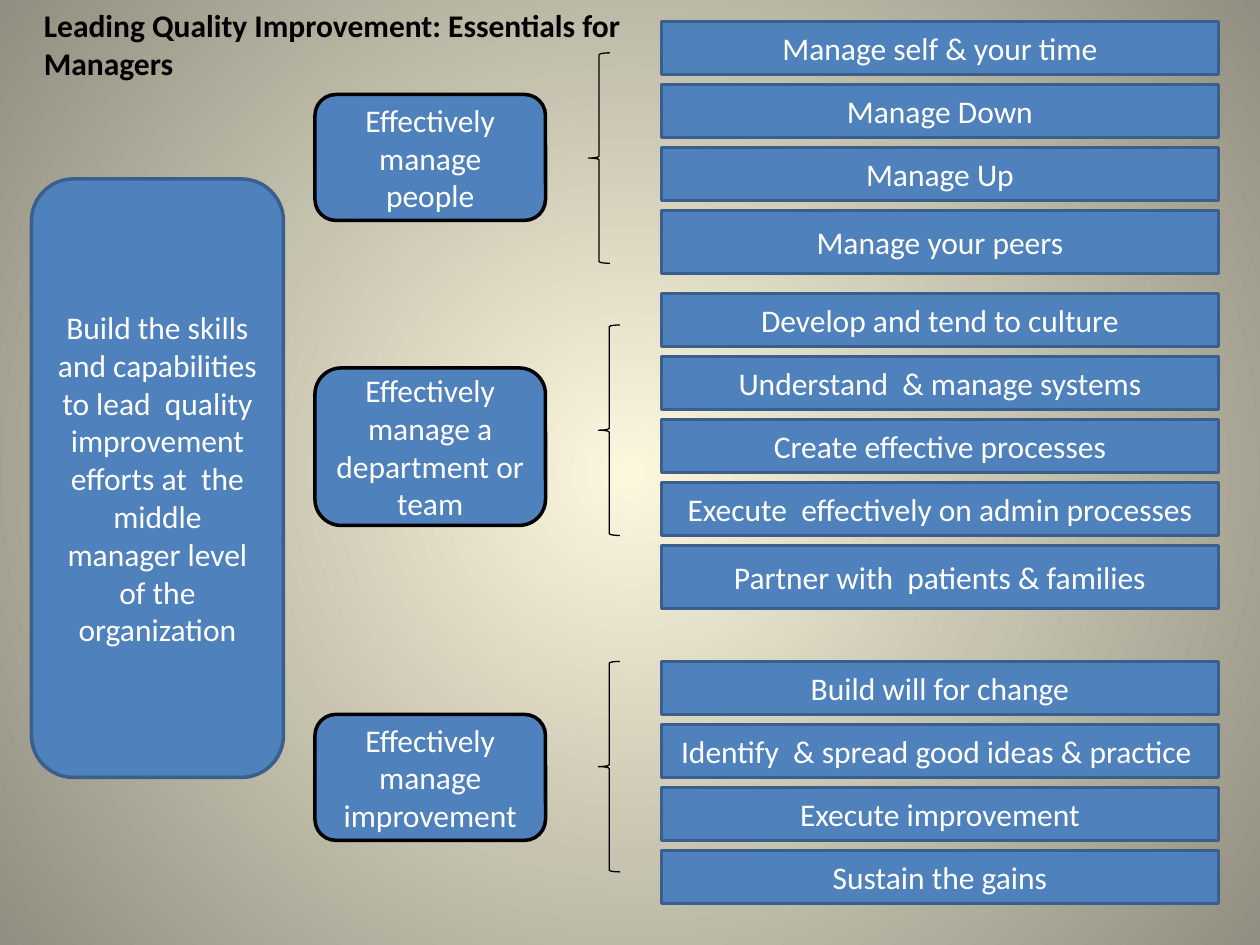
from lxml.etree import SubElement
from pptx import Presentation
from pptx.dml.color import RGBColor
from pptx.enum.shapes import MSO_SHAPE
from pptx.enum.text import MSO_ANCHOR, PP_ALIGN
from pptx.oxml.ns import qn
from pptx.util import Inches, Pt

BLUE = RGBColor(0x4F, 0x81, 0xBD)
NAVY = RGBColor(0x3A, 0x5F, 0x8C)
WHITE = RGBColor(0xFF, 0xFF, 0xFF)
BLACK = RGBColor(0, 0, 0)
CREAM = RGBColor(0xFC, 0xF7, 0xDD)
GRAY = RGBColor(0x91, 0x8E, 0x81)

TITLE = "Leading Quality Improvement: Essentials for Managers"
GOAL = ("Build the skills and capabilities to lead  quality improvement "
        "efforts at  the middle manager level of the organization")
STEP = 0.5

# driver text, top, height; brace left, top; first task top, tasks, last height
GROUPS = [
    ("Effectively manage people", 0.75, 1, 4.67, 0.42, 0.17,
     ["Manage self & your time", "Manage Down", "Manage Up",
      "Manage your peers"], 0.5),
    ("Effectively manage a department or team", 2.92, 1.25, 4.75, 2.58, 2.33,
     ["Develop and tend to culture", "Understand  & manage systems",
      "Create effective processes", "Execute  effectively on admin processes",
      "Partner with  patients & families"], 0.5),
    ("Effectively manage improvement", 5.67, 1, 4.75, 5.25, 5.25,
     ["Build will for change", "Identify  & spread good ideas & practice ",
      "Execute improvement", "Sustain the gains"], 0.42),
]


def paint_back(slide):
    fill = slide.background.fill
    fill.gradient()
    for stop, color in zip(fill.gradient_stops, (CREAM, GRAY)):
        stop.color.rgb = color
    grad = next(slide.element.iter(qn("a:gradFill")))
    grad.remove(grad.find(qn("a:lin")))
    path = SubElement(grad, qn("a:path"), path="circle")
    SubElement(path, qn("a:fillToRect"),
               l="50000", t="50000", r="50000", b="50000")


def set_text(frame, text, color, bold=False):
    frame.word_wrap = True
    frame.text = text
    font = frame.paragraphs[0].runs[0].font
    font.name = "Calibri"
    font.size = Pt(18)
    font.bold = bold
    font.color.rgb = color


def add_form(slide, kind, box, line, width):
    shape = slide.shapes.add_shape(kind, *map(Inches, box))
    shape.shadow.inherit = False
    shape.line.color.rgb = line
    shape.line.width = Pt(width)
    return shape


def add_box(slide, kind, box, text, line=NAVY):
    shape = add_form(slide, kind, box, line, 2)
    shape.fill.solid()
    shape.fill.fore_color.rgb = BLUE
    frame = shape.text_frame
    set_text(frame, text, WHITE)
    frame.vertical_anchor = MSO_ANCHOR.MIDDLE
    frame.paragraphs[0].alignment = PP_ALIGN.CENTER


def add_brace(slide, left, top):
    brace = add_form(slide, MSO_SHAPE.LEFT_BRACE,
                     (left, top, 0.17, 1.67), BLACK, 0.75)
    brace.fill.background()


def add_tasks(slide, top, tasks, last):
    for i, task in enumerate(tasks):
        height = last if i == len(tasks) - 1 else 0.42
        add_box(slide, MSO_SHAPE.FLOWCHART_PROCESS,
                (5.25, top + i * STEP, 4.42, height), task)


def add_title(slide):
    box = slide.shapes.add_textbox(Inches(0.25), 0, Inches(4.92), Inches(0.71))
    set_text(box.text_frame, TITLE, BLACK, bold=True)


def main():
    deck = Presentation()
    deck.slide_width = Inches(10)
    deck.slide_height = Inches(7.5)
    slide = deck.slides.add_slide(deck.slide_layouts[6])
    paint_back(slide)
    add_box(slide, MSO_SHAPE.ROUNDED_RECTANGLE, (0.25, 1.42, 2, 4.75), GOAL)
    for text, top, height, left, peak, start, tasks, last in GROUPS:
        add_box(slide, MSO_SHAPE.ROUNDED_RECTANGLE,
                (2.5, top, 1.83, height), text, BLACK)
        add_tasks(slide, start, tasks, last)
        add_brace(slide, left, peak)
    add_title(slide)
    deck.save("out.pptx")


if __name__ == "__main__":
    main()
